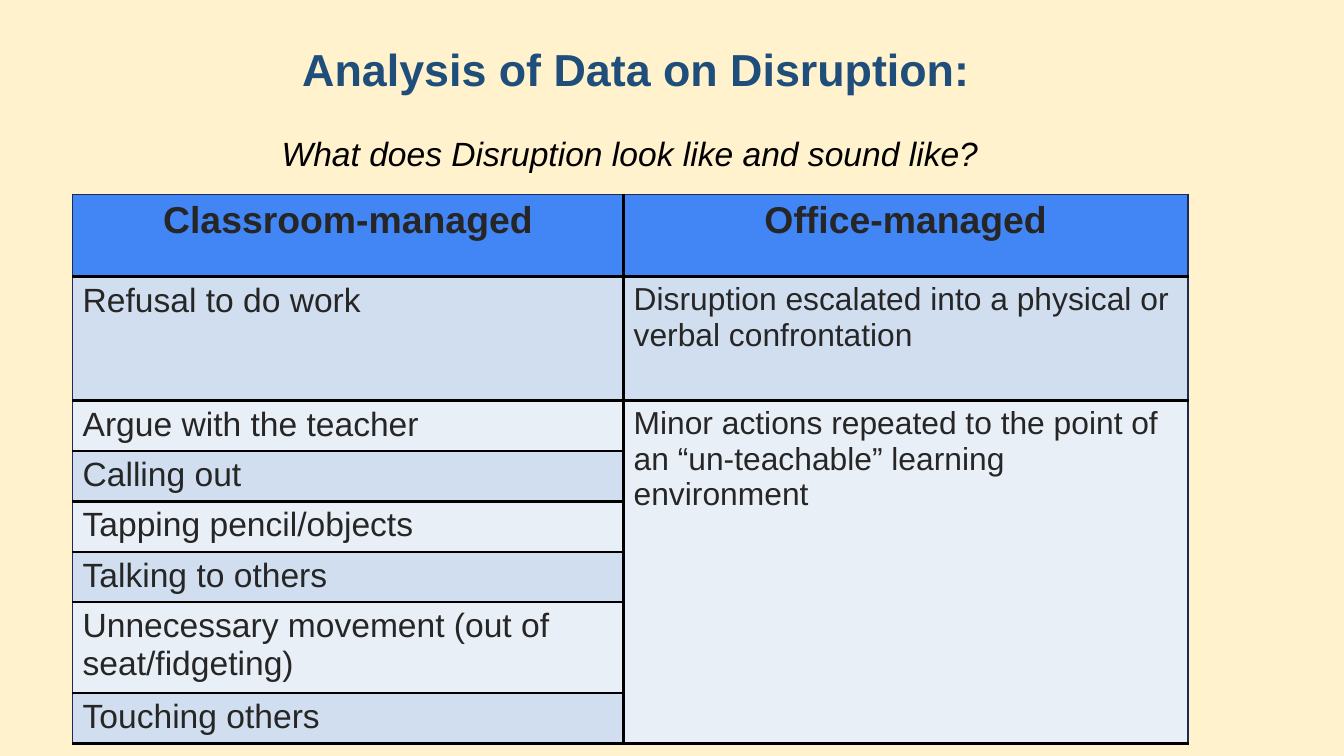
"""Build the slide comparing classroom-managed and office-managed disruption."""
from lxml.etree import SubElement
from pptx import Presentation
from pptx.dml.color import RGBColor
from pptx.enum.text import MSO_ANCHOR, PP_ALIGN
from pptx.oxml.ns import qn
from pptx.util import Pt

COLORS = {
    "background": "FFF2CC", "title": "1E4E79", "black": "000000",
    "body": "262626", "header": "4285F4", "dark_band": "D0DEEF",
    "light_band": "E9EFF7", "outline": "1D2A53",
}
MARGINS = {"margin_left": Pt(5.4), "margin_right": Pt(5.4),
           "margin_top": Pt(2.7), "margin_bottom": Pt(2.7)}


def write_text(paragraph, text, color, alignment, **font_format):
    paragraph.alignment = alignment
    run = paragraph.add_run()
    run.text = text
    run.font.name = "Arial"
    run.font.color.rgb = RGBColor.from_string(COLORS[color])
    for name, value in font_format.items():
        setattr(run.font, name, value)


def add_border(cell, side, color, width):
    line = SubElement(cell._tc.get_or_add_tcPr(), qn(f"a:ln{side}"), w=str(Pt(width)))
    fill = SubElement(line, qn("a:solidFill"))
    SubElement(fill, qn("a:srgbClr"), val=COLORS[color])


presentation = Presentation()
presentation.slide_width = Pt(720)
presentation.slide_height = Pt(405)
slide = presentation.slides.add_slide(presentation.slide_layouts[6])
slide.background.fill.solid()
slide.background.fill.fore_color.rgb = RGBColor.from_string(COLORS["background"])

headings = [
    ("Analysis of Data on Disruption:", (156.5, 18, 411, 41), "title",
     PP_ALIGN.LEFT, MSO_ANCHOR.MIDDLE, 0.9, {"size": Pt(24), "bold": True}),
    ("What does Disruption look like and sound like?", (88.5, 68.5, 498, 27), "black",
     PP_ALIGN.CENTER, MSO_ANCHOR.TOP, 1.0, {"size": Pt(18), "italic": True}),
]
for text, position, color, alignment, anchor, spacing, font_format in headings:
    shape = slide.shapes.add_textbox(*map(Pt, position))
    frame_format = {**MARGINS, "word_wrap": True, "vertical_anchor": anchor}
    for name, value in frame_format.items():
        setattr(shape.text_frame, name, value)
    paragraph = shape.text_frame.paragraphs[0]
    paragraph.line_spacing = spacing
    write_text(paragraph, text, color, alignment, **font_format)

rows = [
    ("Classroom-managed", "Office-managed", 44),
    ("Refusal to do work",
     "Disruption escalated into a physical or verbal confrontation", 66.4),
    ("Argue with the teacher",
     "Minor actions repeated to the point of an “un-teachable” learning environment", 25.7),
    ("Calling out", "", 25.7),
    ("Tapping pencil/objects", "", 25.7),
    ("Talking to others", "", 25.7),
    ("Unnecessary movement (out of seat/fidgeting)", "", 46),
    ("Touching others", "", 25.7),
]
column_widths = [295.2, 302.4]
table_height = sum(row[-1] for row in rows)
table = slide.shapes.add_table(
    len(rows), 2, Pt(38.9), Pt(104.2), Pt(sum(column_widths)), Pt(table_height)).table
for column, width in zip(table.columns, column_widths):
    column.width = Pt(width)

for row_index, (*texts, height) in enumerate(rows):
    table.rows[row_index].height = Pt(height)
    is_header = row_index == 0
    band = "header" if is_header else ("light_band", "dark_band")[row_index % 2]
    for column_index, text in enumerate(texts):
        cell = table.cell(row_index, column_index)
        for name, value in MARGINS.items():
            setattr(cell, name, value)
        outer_sides = {"L": column_index == 0, "R": column_index == 1,
                       "T": is_header, "B": False}
        for side, is_outer in outer_sides.items():
            add_border(cell, side, *(("outline", 1) if is_outer else ("black", 1.5)))
        cell.fill.solid()
        cell.fill.fore_color.rgb = RGBColor.from_string(COLORS[band])
        if text:
            size = 20 if is_header else (18, 17)[column_index]
            alignment = PP_ALIGN.CENTER if is_header else PP_ALIGN.LEFT
            write_text(cell.text_frame.paragraphs[0], text, "body", alignment,
                       size=Pt(size), bold=is_header)

table.cell(2, 1).merge(table.cell(7, 1))
presentation.save("out.pptx")
